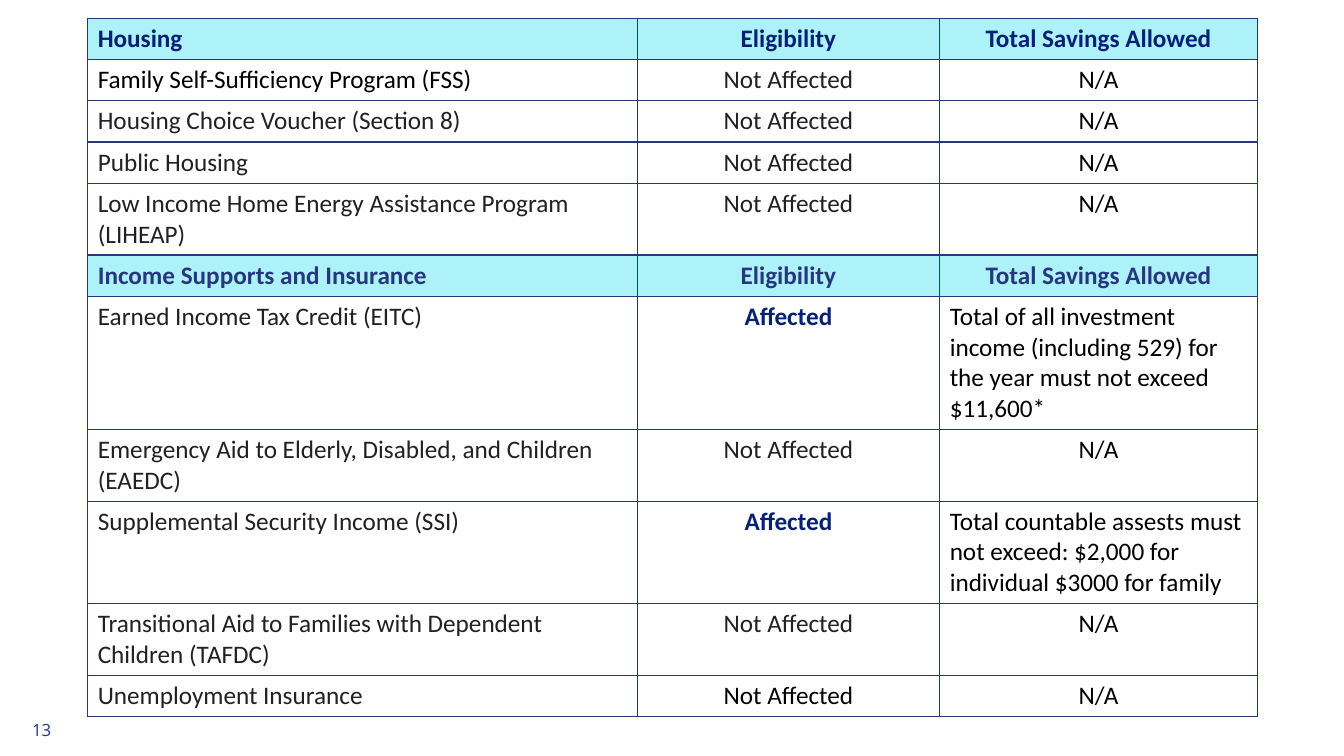
"""Build a slide listing how savings affect housing and income benefits."""
from dataclasses import dataclass
from typing import Any

from lxml.etree import SubElement
from pptx import Presentation
from pptx.dml.color import RGBColor as Rgb
from pptx.enum.text import PP_ALIGN as Align
from pptx.oxml.ns import qn
from pptx.util import Inches, Pt

COLORS = {
    "navy": "052075",
    "indigo": "26377E",
    "charcoal": "212121",
    "black": "000000",
    "aqua": "ADF2F9",
    "white": "FFFFFF",
}
COLUMN_WIDTHS = (5.45, 3, 3.15)
ROW_HEIGHT = 0.41
BORDER_SIDES = ("a:lnL", "a:lnR", "a:lnT", "a:lnB")


@dataclass(frozen=True)
class Entry:
    text: str
    color: str = "charcoal"
    bold: bool = False
    align: Any = Align.CENTER


@dataclass(frozen=True)
class BenefitRow:
    entries: tuple[Entry, Entry, Entry]
    fill: str = "white"


def heading(title: str, color: str) -> BenefitRow:
    """Return a section heading row."""
    return BenefitRow((
        Entry(title, color, True, Align.LEFT),
        Entry("Eligibility", color, True),
        Entry("Total Savings Allowed", color, True),
    ), "aqua")


def unaffected(program: str, color: str = "charcoal",
               status_color: str = "charcoal") -> BenefitRow:
    """Return a row for a program that savings leave unchanged."""
    return BenefitRow((
        Entry(program, color, align=Align.LEFT),
        Entry("Not Affected", status_color),
        Entry("N/A", "black"),
    ))


def affected(program: str, limit: str) -> BenefitRow:
    """Return a row for a program with a savings limit."""
    return BenefitRow((
        Entry(program, align=Align.LEFT),
        Entry("Affected", "navy", True),
        Entry(limit, "black", align=Align.LEFT),
    ))


BENEFIT_ROWS = (
    heading("Housing", "navy"),
    unaffected("Family Self-Sufficiency Program (FSS)", "black"),
    unaffected("Housing Choice Voucher (Section 8)"),
    unaffected("Public Housing"),
    unaffected("Low Income Home Energy Assistance Program (LIHEAP)"),
    heading("Income Supports and Insurance", "indigo"),
    affected("Earned Income Tax Credit (EITC)",
             "Total of all investment income (including 529) for the year "
             "must not exceed $11,600*"),
    unaffected("Emergency Aid to Elderly, Disabled, and Children (EAEDC)"),
    affected("Supplemental Security Income (SSI)",
             "Total countable assests must not exceed: $2,000 for individual "
             "$3000 for family"),
    unaffected("Transitional Aid to Families with Dependent Children (TAFDC)"),
    unaffected("Unemployment Insurance", status_color="black"),
)


def write_text(para: Any, entry: Entry, font_name: str, size: float) -> None:
    """Write one formatted span into a paragraph."""
    para.alignment = entry.align
    span = para.add_run()
    span.text = entry.text
    font_format = {"name": font_name, "size": Pt(size), "bold": entry.bold}
    for name, value in font_format.items():
        setattr(span.font, name, value)
    span.font.color.rgb = Rgb.from_string(COLORS[entry.color])


def add_borders(cell: Any) -> None:
    """Give a cell a thin line on every side."""
    properties = cell._tc.get_or_add_tcPr()
    for side in BORDER_SIDES:
        line = SubElement(properties, qn(side), w=str(Pt(1)))
        fill = SubElement(line, qn("a:solidFill"))
        SubElement(fill, qn("a:srgbClr"), val=COLORS["indigo"])


def add_benefit_table(page: Any) -> None:
    """Draw the table of benefit programs."""
    table = page.shapes.add_table(
        len(BENEFIT_ROWS), len(COLUMN_WIDTHS), Inches(0.87), Inches(0.18),
        Inches(sum(COLUMN_WIDTHS)), Inches(ROW_HEIGHT * len(BENEFIT_ROWS)),
    ).table
    for name, value in {"first_row": False, "horz_banding": False}.items():
        setattr(table, name, value)
    for column, width in zip(table.columns, COLUMN_WIDTHS):
        column.width = Inches(width)
    for table_row, benefit in zip(table.rows, BENEFIT_ROWS):
        table_row.height = Inches(ROW_HEIGHT)
        for cell, entry in zip(table_row.cells, benefit.entries):
            add_borders(cell)
            cell.fill.solid()
            cell.fill.fore_color.rgb = Rgb.from_string(COLORS[benefit.fill])
            write_text(cell.text_frame.paragraphs[0], entry, "Calibri", 18)


def add_page_number(page: Any) -> None:
    """Draw the page number in the lower left corner."""
    box = page.shapes.add_textbox(
        Inches(0.22), Inches(7.09), Inches(0.54), Inches(0.3))
    box.text_frame.word_wrap = True
    write_text(box.text_frame.paragraphs[0],
               Entry("13", "indigo", align=Align.LEFT), "Open Sans", 12)


def main() -> None:
    """Build and save the deck."""
    deck = Presentation()
    deck.slide_width, deck.slide_height = Inches(13.33), Inches(7.5)
    page = deck.slides.add_slide(deck.slide_layouts[6])
    add_benefit_table(page)
    add_page_number(page)
    deck.save("out.pptx")


if __name__ == "__main__":
    main()
